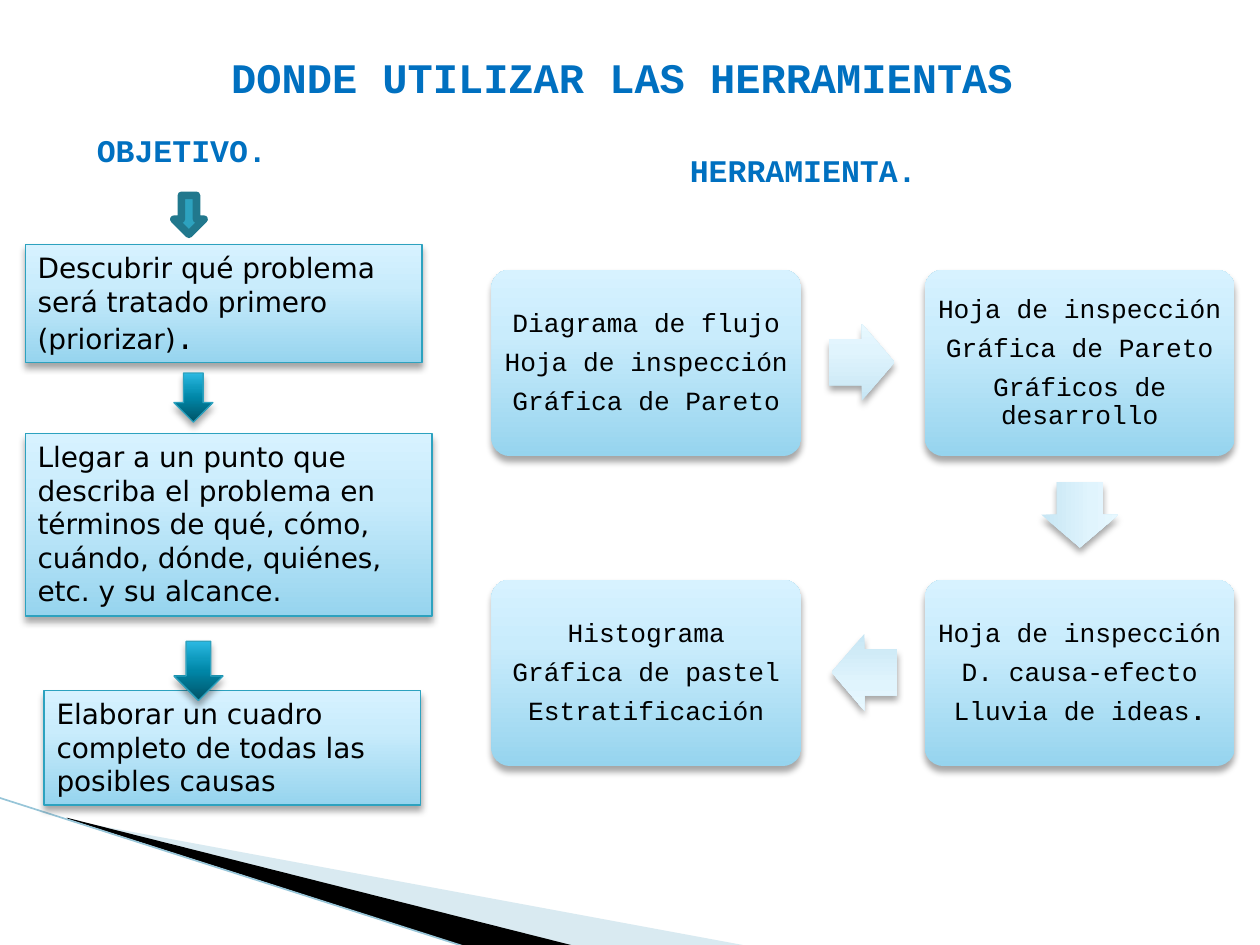
from lxml import etree
from pptx import Presentation
from pptx.dml.color import RGBColor
from pptx.enum.shapes import MSO_CONNECTOR, MSO_SHAPE
from pptx.enum.text import MSO_ANCHOR, PP_ALIGN
from pptx.oxml import parse_xml
from pptx.oxml.ns import qn
from pptx.util import Inches, Pt

RECT, ROUND = MSO_SHAPE.RECTANGLE, MSO_SHAPE.ROUNDED_RECTANGLE
DOWN, RIGHT = MSO_SHAPE.DOWN_ARROW, MSO_SHAPE.RIGHT_ARROW
LEFT, CENTER = PP_ALIGN.LEFT, PP_ALIGN.CENTER
TOP, MIDDLE = MSO_ANCHOR.TOP, MSO_ANCHOR.MIDDLE
MONO, SANS = "Courier New", "DejaVu Sans"
BLUE, TEAL, BLACK = "0070C0", "2DA2BF", "000000"
NS = 'xmlns:a="http://schemas.openxmlformats.org/drawingml/2006/main"'

# Gradient stops, from the bottom up
PALE = [(0, "96D4EE"), (65, "C9ECFC"), (100, "D7F2FF")]
FAINT = [(0, "C7E6F4"), (65, "E0F4FD"), (100, "E8F8FF")]
DEEP = [(0, "005367"), (50, "0086A7"), (70, "0E9ABE"), (100, "2CB9E3")]

# Headings: text, box, size, alignment
HEADS = [
    ("DONDE UTILIZAR LAS HERRAMIENTAS ", (1.69, 0.36, 6.69, 0.5), 24, CENTER),
    ("OBJETIVO.", (0.67, 0.99, 1.97, 0.4), 18, LEFT),
    ("HERRAMIENTA.", (4.84, 1.15, 3.07, 0.4), 18, CENTER),
]

# A paragraph is a string, or a pair of text and a specially set ending
GOALS = [
    ((0.2, 1.94, 3.15, 0.94),
     ["Descubrir qué problema será tratado primero", ("(priorizar)", ".")]),
    ((0.2, 3.44, 3.23, 1.45),
     ["Llegar a un punto que describa el problema en términos de qué, cómo, "
      "cuándo, dónde, quiénes,", "etc. y su alcance."]),
    ((0.35, 5.48, 2.99, 0.91),
     ["Elaborar un cuadro completo de todas las posibles causas"]),
]
STEPS = [(1.38, 2.96, 0.31, 0.39), (1.38, 5.09, 0.39, 0.47)]
START = (1.38, 1.55, 0.24, 0.31)

# Tools: column, row, lines
TOOLS = [
    (0, 0, ["Diagrama de flujo", "Hoja de inspección", "Gráfica de Pareto"]),
    (1, 0, ["Hoja de inspección", "Gráfica de Pareto",
            "Gráficos de desarrollo"]),
    (1, 1, ["Hoja de inspección", "D. causa-efecto",
            ("Lluvia de ideas", ".")]),
    (0, 1, ["Histograma", "Gráfica de pastel", "Estratificación"]),
]
GRID_X, GRID_Y, STEP_X, STEP_Y = 3.9, 2.14, 3.44, 2.46
CARD_W, CARD_H = 2.46, 1.48
FLOW = [(6.58, 2.57, 0), (8.31, 3.78, 90), (6.6, 5.03, 180)]

# Corner wedges: points, colour, opacity
WEDGES = [
    ([(0.55, 6.51), (5.95, 7.51), (4.56, 7.51), (0.55, 6.5)], "A0CBDC", 40),
    ([(0.53, 6.49), (4.57, 7.51), (3.72, 7.52), (0.54, 6.5)], BLACK, 100),
]


def color(code):
    return RGBColor.from_string(code)


def inches(nums):
    return [Inches(n) for n in nums]


def write(shape, lines, size=16, font=SANS, tint=BLACK, bold=False,
          align=LEFT, anchor=TOP, inset=None, spacing=None, after=0, end=None):
    frame = shape.text_frame
    frame.word_wrap = True
    frame.vertical_anchor = anchor
    if inset is not None:
        frame.margin_left = frame.margin_right = Inches(inset)
        frame.margin_top = frame.margin_bottom = Inches(inset)
    plain = {"size": size, "font": font, "bold": bold}
    for i, line in enumerate(lines):
        para = frame.add_paragraph() if i else frame.paragraphs[0]
        para.alignment = align
        para.line_spacing = spacing
        para.space_after = Pt(after)
        parts = [line] if isinstance(line, str) else line
        for j, part in enumerate(parts):
            look = {**plain, **(end or {})} if j else plain
            run = para.add_run()
            run.text = part
            run.font.size = Pt(look["size"])
            run.font.name = look["font"]
            run.font.bold = look["bold"]
            run.font.color.rgb = color(tint)


def shade(shape, stops):
    """Vertical gradient plus a soft shadow below."""
    marks = "".join(f'<a:gs pos="{pos * 1000}"><a:srgbClr val="{code}"/></a:gs>'
                    for pos, code in stops)
    grad = parse_xml(f'<a:gradFill {NS} rotWithShape="1"><a:gsLst>{marks}</a:gsLst>'
                     '<a:lin ang="16200000" scaled="0"/></a:gradFill>')
    shape.fill.solid()
    props = shape.fill._xPr
    props.replace(props.find(qn("a:solidFill")), grad)
    glow = parse_xml(
        f'<a:outerShdw {NS} blurRad="{Pt(4)}" dist="{Pt(3)}" dir="5400000" '
        f'rotWithShape="0"><a:srgbClr val="{BLACK}"><a:alpha val="35000"/>'
        '</a:srgbClr></a:outerShdw>')
    props.find(qn("a:effectLst")).append(glow)


def outline(shape, code, width):
    shape.line.color.rgb = color(code)
    shape.line.width = Pt(width)


def add(kind, box, stops=None, edge=None, adj=()):
    shape = slide.shapes.add_shape(kind, *inches(box))
    shape.shadow.inherit = False
    for i, value in enumerate(adj):
        shape.adjustments[i] = value
    if edge:
        outline(shape, edge, 0.75)
    else:
        shape.line.fill.background()
    if stops:
        shade(shape, stops)
    return shape


deck = Presentation()
deck.slide_width, deck.slide_height = Inches(10), Inches(7.5)
slide = deck.slides.add_slide(deck.slide_layouts[6])

# Corner decoration
for points, code, alpha in WEDGES:
    first, *rest = [inches(point) for point in points]
    pen = slide.shapes.build_freeform(*first)
    pen.add_line_segments(rest, close=True)
    wedge = pen.convert_to_shape()
    wedge.shadow.inherit = False
    wedge.line.fill.background()
    wedge.fill.solid()
    wedge.fill.fore_color.rgb = color(code)
    if alpha < 100:
        tone = wedge.fill._xPr.find(qn("a:solidFill"))[0]
        etree.SubElement(tone, qn("a:alpha")).set("val", str(alpha * 1000))
rule = slide.shapes.add_connector(MSO_CONNECTOR.STRAIGHT,
                                  *inches((-0.01, 6.33, 3.71, 7.52)))
outline(rule, "97C5D8", 0.95)
etree.SubElement(rule.line._ln.getparent(), qn("a:effectLst"))

# Headings
for text, box, size, align in HEADS:
    write(slide.shapes.add_textbox(*inches(box)), [text], size=size, font=MONO,
          tint=BLUE, bold=True, align=align)

# Goals and the arrows between them
for box, lines in GOALS:
    write(add(RECT, box, PALE, TEAL), lines, end={"size": 18, "font": MONO})
for box in STEPS:
    add(DOWN, box, DEEP, TEAL)
start = add(DOWN, START)
start.fill.solid()
start.fill.fore_color.rgb = color(TEAL)
outline(start, "21788D", 4.33)

# Tool cards and the flow around them
for col, row, lines in TOOLS:
    box = (GRID_X + col * STEP_X, GRID_Y + row * STEP_Y, CARD_W, CARD_H)
    write(add(ROUND, box, PALE, adj=[0.1]), lines, size=15, font=MONO,
          align=CENTER, anchor=MIDDLE, inset=0.02, spacing=0.9, after=6,
          end={"bold": True})
for left, top, turn in FLOW:
    add(RIGHT, (left, top, 0.52, 0.61), FAINT, adj=[0.6, 0.5]).rotation = turn

deck.save("out.pptx")
